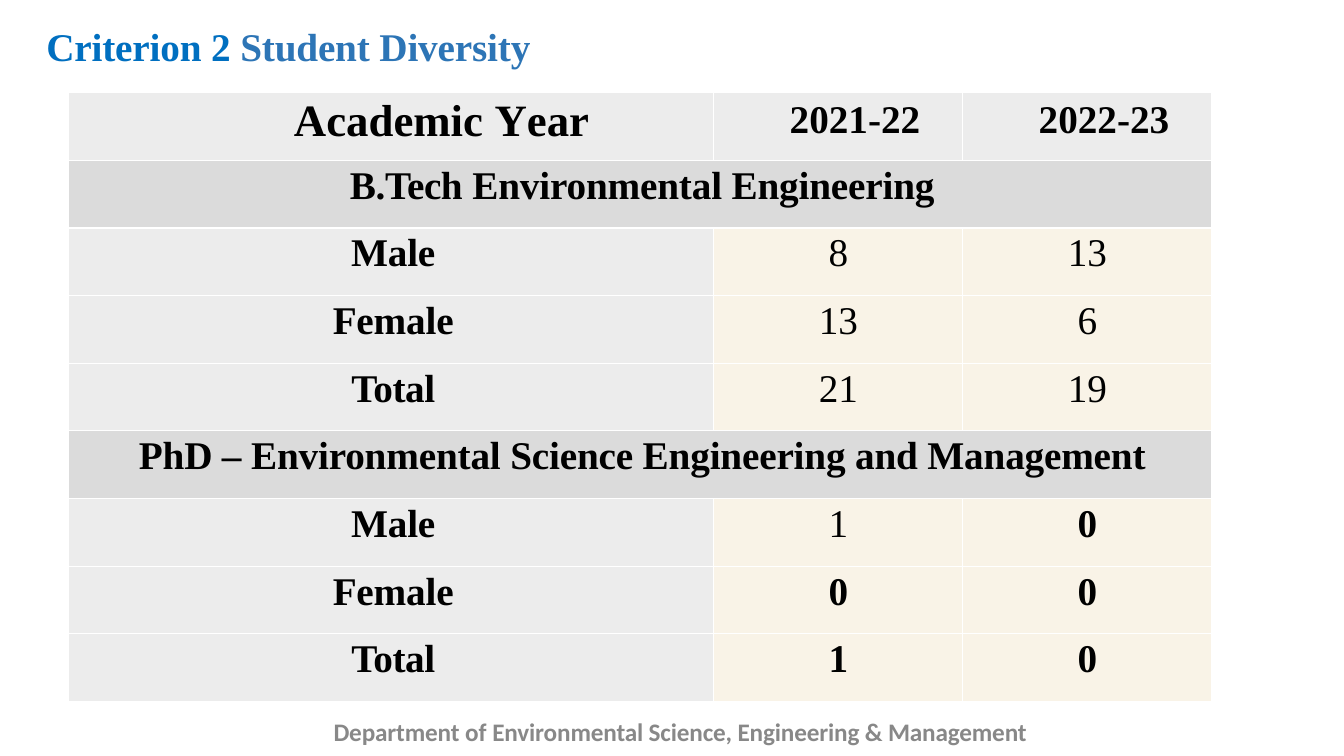
from lxml.etree import SubElement
from pptx import Presentation
from pptx.dml.color import RGBColor
from pptx.enum.text import MSO_ANCHOR, PP_ALIGN
from pptx.oxml import parse_xml
from pptx.oxml.ns import nsdecls, qn
from pptx.util import Pt

PX = 9144
SERIF = "Times New Roman"
BLACK = RGBColor(0x00, 0x00, 0x00)
TITLE_BLUE = RGBColor(0x00, 0x6F, 0xC0)
SUBTITLE_BLUE = RGBColor(0x2D, 0x75, 0xB6)
FOOTER_GREY = RGBColor(0x88, 0x88, 0x88)
LABEL_GREY = RGBColor(0xEC, 0xEC, 0xEC)
BAND_GREY = RGBColor(0xDB, 0xDB, 0xDB)
VALUE_CREAM = RGBColor(0xF9, 0xF3, 0xE7)

TITLE_BOX = (45, 21, 486, 49)
TABLE_BOX = (68, 92, 1134, 604)
FOOTER_BOX = (320, 706, 724, 40)
COLUMN_WIDTHS = (640, 247, 247)
YEARS = ("2021-22", "2022-23")
PROGRAMMES = (
    ([("B.Tech", -30), (" Environmental Engineering", -10)],
     (("Male", -10, ("8", "13"), (False, False)),
      ("Female", -10, ("13", "6"), (False, False)),
      ("Total", -30, ("21", "19"), (False, False)))),
    ([("PhD – Environmental Science Engineering and Management", -10)],
     (("Male", -10, ("1", "0"), (False, True)),
      ("Female", -10, ("0", "0"), (True, True)),
      ("Total", -30, ("1", "0"), (True, True)))),
)


def add_span(para, text, size, color=BLACK, bold=True, spacing=0, font=SERIF):
    """Add one formatted run to a paragraph."""
    span = para.add_run()
    span.text = text
    span.font.name = font
    span.font.size = Pt(size)
    span.font.bold = bold
    span.font.color.rgb = color
    span.font._element.set("spc", str(spacing))


def add_line(page, box, insets, spans, size, font):
    """Place a single line of text made of (text, colour, spacing) spans."""
    frame = page.shapes.add_textbox(*(length * PX for length in box)).text_frame
    frame.word_wrap = False
    (frame.margin_left, frame.margin_top,
     frame.margin_right, frame.margin_bottom) = (inset * PX for inset in insets)
    para = frame.paragraphs[0]
    para.alignment = PP_ALIGN.LEFT
    para._p.get_or_add_pPr().set("marL", str(PX))
    for text, color, spacing in spans:
        add_span(para, text, size, color, spacing=spacing, font=font)


def fill_cell(cell, fill, spans, size=28, bold=True, indent=0, top=4):
    """Fill a cell, rule it in white and write its centred spans."""
    cell.fill.solid()
    cell.fill.fore_color.rgb = fill
    properties = cell._tc.get_or_add_tcPr()
    for index, side in enumerate(("lnL", "lnR", "lnT", "lnB")):
        border = parse_xml(f'<a:{side} {nsdecls("a")} w="12700"/>')
        solid = SubElement(border, qn("a:solidFill"))
        SubElement(solid, qn("a:srgbClr"), val="FFFFFF")
        properties.insert(index, border)
    cell.margin_left = cell.margin_right = cell.margin_bottom = 0
    cell.margin_top = top * PX
    cell.vertical_anchor = MSO_ANCHOR.TOP
    para = cell.text_frame.paragraphs[0]
    para.alignment = PP_ALIGN.CENTER
    para._p.get_or_add_pPr().set("marL", str(indent * PX))
    for text, spacing in spans:
        add_span(para, text, size, bold=bold, spacing=spacing)


def add_diversity_table(page, box):
    """Place the table of students by programme, gender and year."""
    row_count = 1 + sum(1 + len(groups) for _, groups in PROGRAMMES)
    table = page.shapes.add_table(
        row_count, len(COLUMN_WIDTHS), *(length * PX for length in box)).table
    table.first_row = table.horz_banding = False
    for column, width in zip(table.columns, COLUMN_WIDTHS):
        column.width = width * PX
    for row in table.rows:
        row.height = box[3] * PX // row_count

    heading = [("Academic ", 0), ("Y", -210), ("ear", 0)]
    fill_cell(table.cell(0, 0), LABEL_GREY, heading, size=32, indent=100)
    for column, year in enumerate(YEARS, 1):
        fill_cell(table.cell(0, column), LABEL_GREY, [(year, 0)], indent=33, top=6)

    row = 1
    for programme, groups in PROGRAMMES:
        table.cell(row, 0).merge(table.cell(row, len(YEARS)))
        fill_cell(table.cell(row, 0), BAND_GREY, programme, indent=4)
        for row, (label, spacing, values, bolds) in enumerate(groups, row + 1):
            fill_cell(table.cell(row, 0), LABEL_GREY, [(label, spacing)], indent=4)
            for column, (value, bold) in enumerate(zip(values, bolds), 1):
                fill_cell(table.cell(row, column), VALUE_CREAM, [(value, 0)], bold=bold)
        row += 1


def main():
    """Build the student diversity slide and save it."""
    deck = Presentation()
    deck.slide_width, deck.slide_height = 1333 * PX, 750 * PX
    page = deck.slides.add_slide(deck.slide_layouts[6])
    add_diversity_table(page, TABLE_BOX)
    add_line(page, TITLE_BOX, (0, 1, 0, 0),
             [("Criterion 2 ", TITLE_BLUE, -10),
              ("Student Diversity", SUBTITLE_BLUE, -10)], 28, SERIF)
    add_line(page, FOOTER_BOX, (10, 5, 10, 5),
             [("Department ", FOOTER_GREY, -10), ("of ", FOOTER_GREY, 0),
              ("Environmental Science, Engineering & Management", FOOTER_GREY, -10)],
             18, "Calibri")
    deck.save("out.pptx")


if __name__ == "__main__":
    main()
